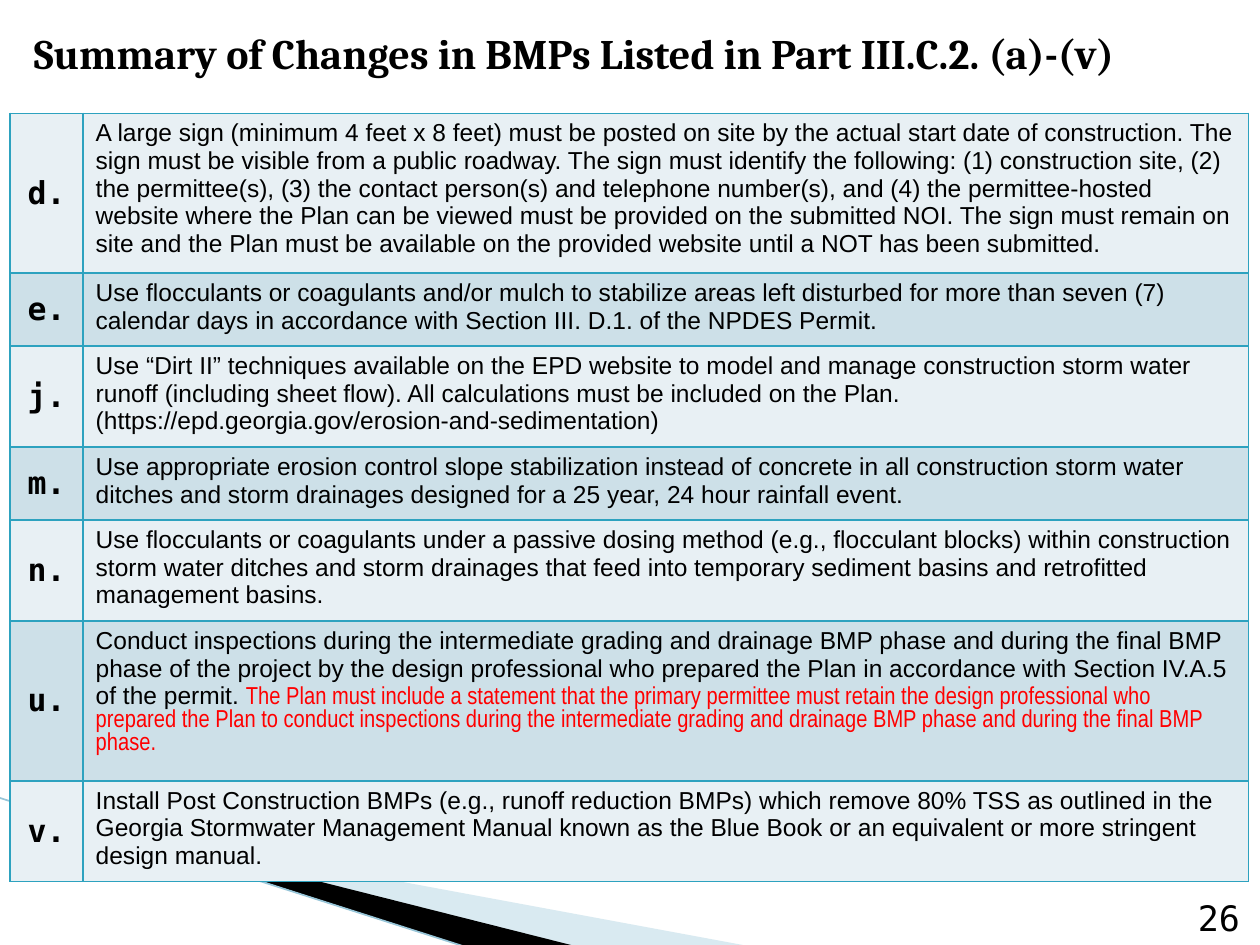
from lxml import etree
from pptx import Presentation
from pptx import util as u
from pptx.dml.color import RGBColor
from pptx.enum import shapes, text
from pptx.oxml.ns import qn

COLORS = {
    "black": "000000", "red": "FF0000", "border": "2DA2BF", "stripe": "97C5D8",
    "wedge": "A0CBDC", "light": "E8F0F4", "dark": "CDE0E8",
}
LETTER = {"name": "DejaVu Sans Mono", "size": u.Pt(18), "bold": True}
BODY = {"name": "Arial", "size": u.Pt(14), "bold": False}
ADDED = {"name": "Arial Narrow", "size": u.Pt(14), "bold": False}
TITLE = {"name": "Cambria", "size": u.Pt(24), "bold": True}
NUMBER = {"name": "DejaVu Sans Mono", "size": u.Pt(20), "bold": False}


def add_run(paragraph, words, font_format, color="black"):
    run = paragraph.add_run()
    run.text = words
    for key, value in font_format.items():
        setattr(run.font, key, value)
    run.font.color.rgb = RGBColor.from_string(COLORS[color])


def border_cell(cell):
    """Draw the four cell borders, then fill, in the order the schema asks for."""
    properties = cell._tc.get_or_add_tcPr()
    for position, side in enumerate(("lnL", "lnR", "lnT", "lnB")):
        line = etree.Element(qn(f"a:{side}"), w=str(u.Pt(1)))
        fill = etree.SubElement(line, qn("a:solidFill"))
        etree.SubElement(fill, qn("a:srgbClr"), val=COLORS["border"])
        properties.insert(position, line)


prs = Presentation()
prs.slide_width, prs.slide_height = u.Inches(10), u.Inches(7.5)
slide = prs.slides.add_slide(prs.slide_layouts[6])

# Decorative wedges and stripe at the bottom left
wedges = [
    ("wedge", 40, [(0.55, 6.51), (5.95, 7.51), (4.56, 7.51), (0.55, 6.5)]),
    ("black", 100, [(0.53, 6.49), (4.57, 7.51), (3.72, 7.52), (0.54, 6.5)]),
]
for color, opacity, corners in wedges:
    points = [(u.Inches(x), u.Inches(y)) for x, y in corners]
    builder = slide.shapes.build_freeform(*points[0])
    builder.add_line_segments(points[1:], close=True)
    wedge = builder.convert_to_shape()
    wedge.shadow.inherit = False
    wedge.line.fill.background()
    wedge.fill.solid()
    wedge.fill.fore_color.rgb = RGBColor.from_string(COLORS[color])
    if opacity < 100:
        tint = wedge.fill._xPr.find(f".//{qn('a:srgbClr')}")
        etree.SubElement(tint, qn("a:alpha"), val=str(opacity * 1000))

stripe = slide.shapes.add_connector(
    shapes.MSO_CONNECTOR.STRAIGHT,
    u.Inches(-0.01), u.Inches(6.33), u.Inches(3.71), u.Inches(7.52))
stripe.line.color.rgb = RGBColor.from_string(COLORS["stripe"])
stripe.line.width = u.Pt(0.95)
etree.SubElement(stripe._element.spPr, qn("a:effectLst"))

# Title and page number
captions = [
    ("Summary of Changes in BMPs Listed in Part III.C.2. (a)-(v)", TITLE,
     (0.17, 0.08, 9.67, 0.67), text.MSO_ANCHOR.MIDDLE, text.PP_ALIGN.LEFT),
    ("26", NUMBER,
     (9.25, 6.93, 0.69, 0.57), text.MSO_ANCHOR.BOTTOM, text.PP_ALIGN.RIGHT),
]
for words, font_format, place, anchor, alignment in captions:
    frame = slide.shapes.add_textbox(*map(u.Inches, place)).text_frame
    frame.word_wrap = True
    frame.vertical_anchor = anchor
    frame.paragraphs[0].alignment = alignment
    add_run(frame.paragraphs[0], words, font_format)

# Table of practices: letter, row height, requirement
practices = [
    ("d.", 1.25, "A large sign (minimum 4 feet x 8 feet) must be posted on site by the "
     "actual start date of construction. The sign must be visible from a public roadway. "
     "The sign must identify the following: (1) construction site, (2) the permittee(s), "
     "(3) the contact person(s) and telephone number(s), and (4) the permittee-hosted "
     "website where the Plan can be viewed must be provided on the submitted NOI. The sign "
     "must remain on site and the Plan must be available on the provided website until a "
     "NOT has been submitted."),
    ("e.", 0.58, "Use flocculants or coagulants and/or mulch to stabilize areas left "
     "disturbed for more than seven (7) calendar days in accordance with Section III. D.1. "
     "of the NPDES Permit."),
    ("j.", 0.76, "Use “Dirt II” techniques available on the EPD website to model and manage "
     "construction storm water runoff (including sheet flow). All calculations must be "
     "included on the Plan. (https://epd.georgia.gov/erosion-and-sedimentation)"),
    ("m.", 0.58, "Use appropriate erosion control slope stabilization instead of concrete "
     "in all construction storm water ditches and storm drainages designed for a 25 year, "
     "24 hour rainfall event."),
    ("n.", 0.76, "Use flocculants or coagulants under a passive dosing method (e.g., "
     "flocculant blocks) within construction storm water ditches and storm drainages that "
     "feed into temporary sediment basins and retrofitted management basins."),
    ("u.", 1.12, "Conduct inspections during the intermediate grading and drainage BMP "
     "phase and during the final BMP phase of the project by the design professional who "
     "prepared the Plan in accordance with Section IV.A.5 of the permit. "),
    ("v.", 0.76, "Install Post Construction BMPs (e.g., runoff reduction BMPs) which remove "
     "80% TSS as outlined in the Georgia Stormwater Management Manual known as the Blue "
     "Book or an equivalent or more stringent design manual."),
]
additions = {
    "u.": "The Plan must include a statement that the primary permittee must retain the "
    "design professional who prepared the Plan to conduct inspections during the "
    "intermediate grading and drainage BMP phase and during the final BMP phase.",
}
total_height = sum(height for _, height, _ in practices)
table = slide.shapes.add_table(
    len(practices), 2, u.Inches(0.08), u.Inches(0.9),
    u.Inches(9.83), u.Inches(total_height)).table
table.first_row = False
table.columns[0].width, table.columns[1].width = u.Inches(0.58), u.Inches(9.25)

for index, (letter, height, requirement) in enumerate(practices):
    table.rows[index].height = u.Inches(height)
    letter_cell, requirement_cell = table.rows[index].cells
    for cell in (letter_cell, requirement_cell):
        cell.fill.solid()
        cell.fill.fore_color.rgb = RGBColor.from_string(COLORS[("light", "dark")[index % 2]])
        border_cell(cell)
    letter_cell.vertical_anchor = text.MSO_ANCHOR.MIDDLE
    letter_line = letter_cell.text_frame.paragraphs[0]
    letter_line.alignment = text.PP_ALIGN.CENTER
    add_run(letter_line, letter, LETTER)
    requirement_line = requirement_cell.text_frame.paragraphs[0]
    add_run(requirement_line, requirement, BODY)
    if letter in additions:
        add_run(requirement_line, additions[letter], ADDED, "red")

prs.save("out.pptx")
